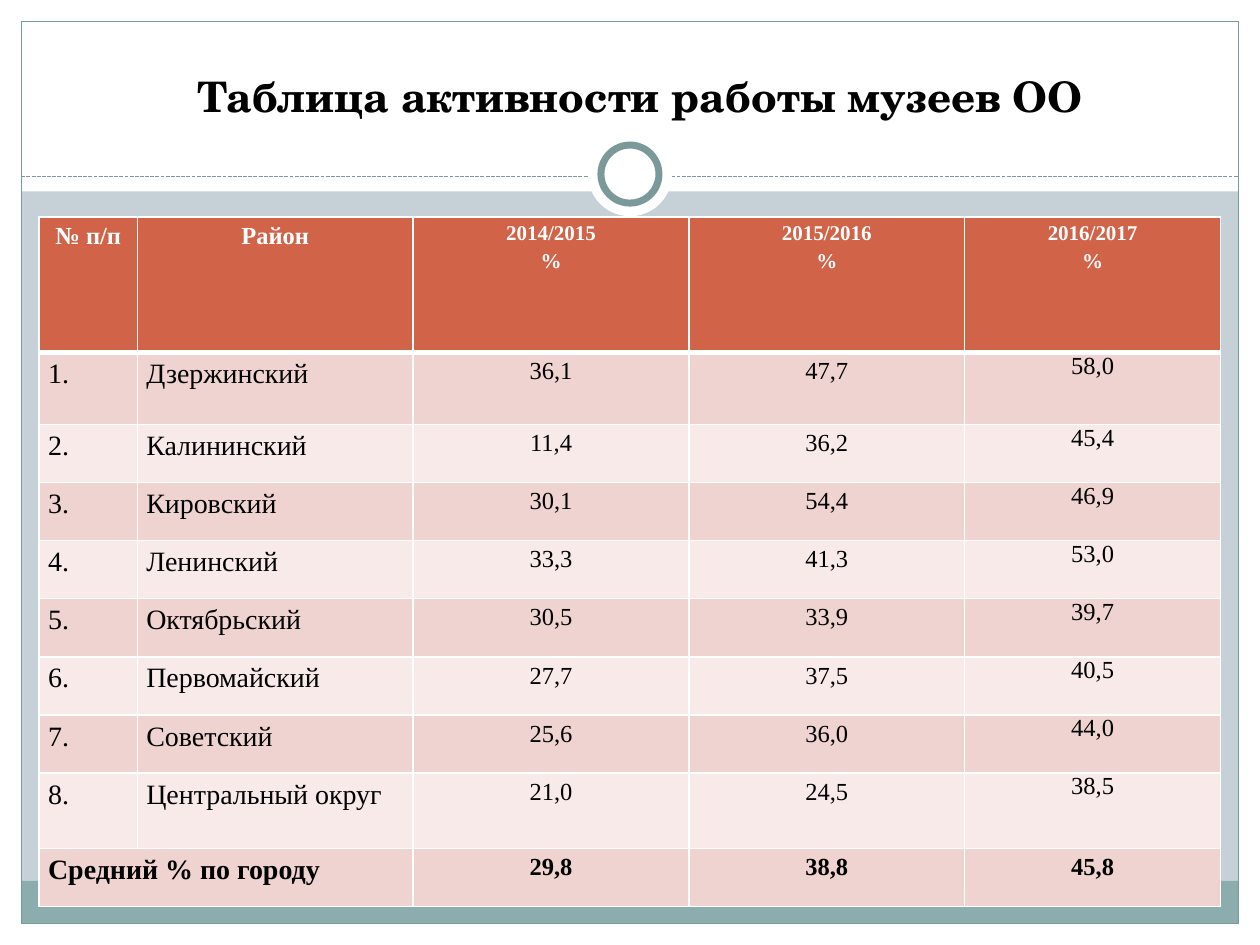
from lxml import etree
from pptx import Presentation
from pptx.dml.color import RGBColor
from pptx.enum.dml import MSO_LINE
from pptx.enum.shapes import MSO_CONNECTOR, MSO_SHAPE
from pptx.enum.text import MSO_ANCHOR, MSO_AUTO_SIZE, PP_ALIGN
from pptx.oxml.ns import qn
from pptx.util import Cm, Pt

RECTANGLE, OVAL = MSO_SHAPE.RECTANGLE, MSO_SHAPE.OVAL
STRAIGHT, DASH = MSO_CONNECTOR.STRAIGHT, MSO_LINE.SQUARE_DOT
CENTER, JUSTIFY = PP_ALIGN.CENTER, PP_ALIGN.JUSTIFY
MIDDLE, GROW = MSO_ANCHOR.MIDDLE, MSO_AUTO_SIZE.SHAPE_TO_FIT_TEXT

WHITE = RGBColor(0xFF, 0xFF, 0xFF)
BLACK = RGBColor(0x00, 0x00, 0x00)
BACKGROUND = RGBColor(0xC5, 0xD1, 0xD7)
FOOTER = RGBColor(0x8C, 0xAD, 0xAE)
OUTLINE = RGBColor(0x7C, 0x99, 0x9A)
HEADER = RGBColor(0xD1, 0x63, 0x49)
BANDS = (RGBColor(0xEE, 0xD3, 0xD0), RGBColor(0xF7, 0xEA, 0xE9))

SLIDE_WIDTH, SLIDE_HEIGHT, MARGIN = 25.4, 19.05, 0.43
INNER_WIDTH = SLIDE_WIDTH - 2 * MARGIN
INNER_HEIGHT = SLIDE_HEIGHT - 2 * MARGIN
TITLE_FONT, TABLE_FONT = "TeX Gyre Schola", "Times New Roman"

COLUMN_WIDTHS = [1.98, 5.56, 5.56, 5.56, 5.16]
ROW_HEIGHTS = [2.74, 1.45] + [1.17] * 6 + [1.52, 1.17]
HEADINGS = ["№ п/п", "Район", "2014/2015\n%", "2015/2016\n%", "2016/2017\n%"]
DISTRICTS = [
    ("Дзержинский", "36,1", "47,7", "58,0"),
    ("Калининский", "11,4", "36,2", "45,4"),
    ("Кировский", "30,1", "54,4", "46,9"),
    ("Ленинский", "33,3", "41,3", "53,0"),
    ("Октябрьский", "30,5", "33,9", "39,7"),
    ("Первомайский", "27,7", "37,5", "40,5"),
    ("Советский", "25,6", "36,0", "44,0"),
    ("Центральный округ", "21,0", "24,5", "38,5"),
]
AVERAGES = ["Средний % по городу", "", "29,8", "38,8", "45,8"]


def write_text(text_frame, text, font=TABLE_FONT, size=14, color=BLACK,
               bold=False, align=CENTER, spacing=1.2):
    """Put each line of the text into its own paragraph."""
    text_frame.text = text
    for paragraph in text_frame.paragraphs:
        paragraph.alignment = align
        paragraph.line_spacing = spacing
        paragraph.font.name = font
        paragraph.font.size = Pt(size)
        paragraph.font.bold = bold
        paragraph.font.color.rgb = color


def set_borders(cell, top=1, bottom=1):
    properties = cell._tc.get_or_add_tcPr()
    for side, width in (("L", 1), ("R", 1), ("T", top), ("B", bottom)):
        line = etree.SubElement(properties, qn(f"a:ln{side}"), w=str(Pt(width)))
        fill = etree.SubElement(line, qn("a:solidFill"))
        etree.SubElement(fill, qn("a:srgbClr"), val=str(WHITE))


class SlideBuilder:
    """Places styled elements on one slide; all lengths are centimetres."""

    def __init__(self, slide):
        self.slide = slide
        slide.background.fill.solid()
        slide.background.fill.fore_color.rgb = BACKGROUND

    def shape(self, kind, left, top, width, height, fill=None, line_width=None):
        shape = self.slide.shapes.add_shape(
            kind, Cm(left), Cm(top), Cm(width), Cm(height))
        shape.shadow.inherit = False
        if fill is None:
            shape.fill.background()
        else:
            shape.fill.solid()
            shape.fill.fore_color.rgb = fill
        if line_width is None:
            shape.line.fill.background()
        else:
            shape.line.color.rgb = OUTLINE
            shape.line.width = Pt(line_width)

    def circle(self, center_x, center_y, diameter, **style):
        self.shape(OVAL, center_x - diameter / 2, center_y - diameter / 2,
                   diameter, diameter, **style)

    def dashed_rule(self, left, right, y):
        rule = self.slide.shapes.add_connector(
            STRAIGHT, Cm(left), Cm(y), Cm(right), Cm(y))
        rule.line.color.rgb = OUTLINE
        rule.line.width = Pt(0.75)
        rule.line.dash_style = DASH
        etree.SubElement(rule.element.spPr, qn("a:effectLst"))

    def title(self, text, left, top, width, height):
        title = self.slide.shapes.title
        title.left, title.top = Cm(left), Cm(top)
        title.width, title.height = Cm(width), Cm(height)
        frame = title.text_frame
        frame.word_wrap = True
        frame.auto_size = GROW
        frame.vertical_anchor = MIDDLE
        write_text(frame, text, font=TITLE_FONT, size=24, bold=True, spacing=1)
        # The placeholder comes first in the tree; bring it above the white band.
        title.element.getparent().append(title.element)

    def cell(self, cell, text, fill, top=1, bottom=1, **text_format):
        cell.margin_left = cell.margin_right = Cm(0.18)
        cell.margin_top = cell.margin_bottom = 0
        set_borders(cell, top, bottom)
        cell.fill.solid()
        cell.fill.fore_color.rgb = fill
        write_text(cell.text_frame, text, **text_format)

    def table(self, left, top):
        table = self.slide.shapes.add_table(
            len(ROW_HEIGHTS), len(COLUMN_WIDTHS), Cm(left), Cm(top),
            Cm(sum(COLUMN_WIDTHS)), Cm(sum(ROW_HEIGHTS))).table
        for column, width in zip(table.columns, COLUMN_WIDTHS):
            column.width = Cm(width)
        for row, height in zip(table.rows, ROW_HEIGHTS):
            row.height = Cm(height)

        for column, heading in enumerate(HEADINGS):
            self.cell(table.cell(0, column), heading, HEADER, bottom=3,
                      size=14 if column < 2 else 12, color=WHITE, bold=True)

        body = [(f"{number}.", *district)
                for number, district in enumerate(DISTRICTS, 1)] + [AVERAGES]
        last_row, last_column = len(body), len(COLUMN_WIDTHS) - 1
        table.cell(last_row, 0).merge(table.cell(last_row, 1))
        for row, values in enumerate(body, 1):
            for column, value in enumerate(values):
                is_label = column < 2
                is_tight = column == last_column and row < last_row
                self.cell(table.cell(row, column), value, BANDS[(row - 1) % 2],
                          top=3 if row == 1 else 1,
                          size=16 if is_label else 14,
                          align=JUSTIFY if is_label else CENTER,
                          bold=row == last_row,
                          spacing=1 if is_tight else 1.2)


def main():
    presentation = Presentation()
    presentation.slide_width = Cm(SLIDE_WIDTH)
    presentation.slide_height = Cm(SLIDE_HEIGHT)
    builder = SlideBuilder(
        presentation.slides.add_slide(presentation.slide_layouts[5]))

    right, bottom = SLIDE_WIDTH - MARGIN, SLIDE_HEIGHT - MARGIN
    for band in ((0, bottom, SLIDE_WIDTH, MARGIN),
                 (0, 0, SLIDE_WIDTH, 3.86),
                 (0, 0, MARGIN, SLIDE_HEIGHT),
                 (right, 0, MARGIN, SLIDE_HEIGHT)):
        builder.shape(RECTANGLE, *band, fill=WHITE)
    builder.shape(RECTANGLE, MARGIN, bottom - 0.86, INNER_WIDTH, 0.86, fill=FOOTER)
    builder.shape(RECTANGLE, MARGIN, MARGIN, INNER_WIDTH, INNER_HEIGHT,
                  line_width=0.75)
    builder.dashed_rule(MARGIN, right, 3.56)
    builder.circle(SLIDE_WIDTH / 2, 3.51, 1.7, fill=WHITE)
    builder.circle(SLIDE_WIDTH / 2, 3.51, 1.17, fill=WHITE, line_width=4)
    builder.table(0.79, 4.37)
    builder.title("Таблица активности работы музеев ОО", 3.18, 1.3, 19.46, 1.27)

    presentation.save("out.pptx")


if __name__ == "__main__":
    main()
